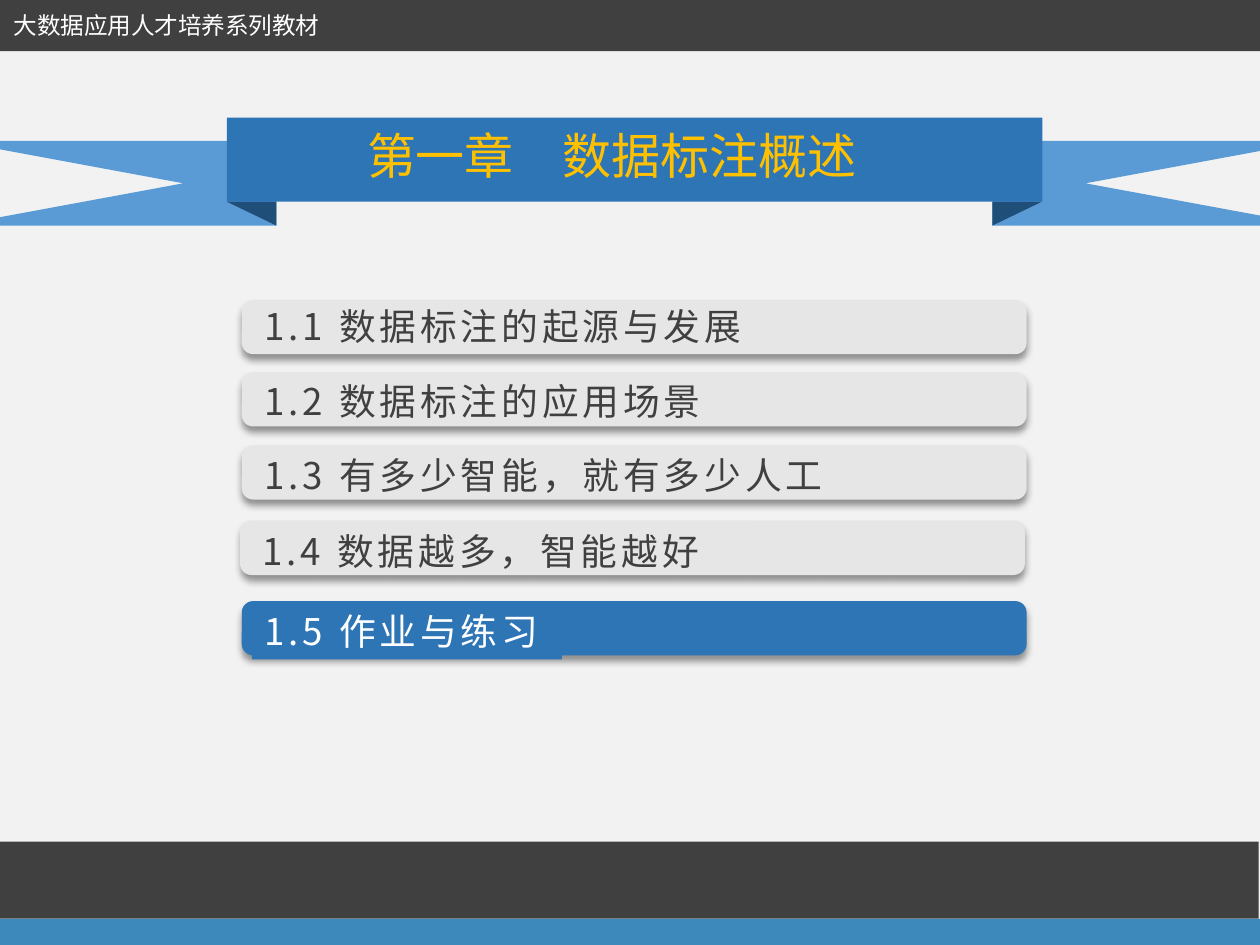
import pptx
import pptx.util
import pptx.dml.color
import pptx.enum.shapes
import pptx.enum.text
import pptx.oxml
import pptx.oxml.ns

Pt = pptx.util.Pt
SHAPES = pptx.enum.shapes.MSO_SHAPE
ALIGN = pptx.enum.text.PP_ALIGN
SHADOW = (
    f'<a:effectLst {pptx.oxml.ns.nsdecls("a")}>'
    f'<a:outerShdw blurRad="{Pt(4)}" dist="{Pt(3)}" dir="5400000" algn="t" rotWithShape="0">'
    '<a:srgbClr val="000000"><a:alpha val="40000"/></a:srgbClr>'
    '</a:outerShdw></a:effectLst>'
)


def color(value):
    return pptx.dml.color.RGBColor.from_string(value)


class Painter:
    font = "Noto Sans CJK SC"
    blue = "2E75B6"
    light_blue = "5B9BD5"
    navy = "1F4E79"
    dark = "404040"
    white = "FFFFFF"
    gold = "FFC000"

    def __init__(self, slide):
        self.slide = slide

    def paint(self, shape, fill):
        shape.shadow.inherit = False
        shape.fill.solid()
        shape.fill.fore_color.rgb = color(fill)
        shape.line.fill.background()

    def shape(self, kind, left, top, width, height, fill, rotation=0):
        shape = self.slide.shapes.add_shape(kind, Pt(left), Pt(top), Pt(width), Pt(height))
        self.paint(shape, fill)
        shape.rotation = rotation
        return shape

    def polygon(self, points, fill):
        start, *others = [(Pt(x), Pt(y)) for x, y in points]
        builder = self.slide.shapes.build_freeform(*start)
        builder.add_line_segments(others, close=True)
        self.paint(builder.convert_to_shape(), fill)

    def text(self, words, left, top, width, height, size, ink, align=ALIGN.LEFT, spacing=0, fill=None):
        box = self.slide.shapes.add_textbox(Pt(left), Pt(top), Pt(width), Pt(height))
        if fill:
            self.paint(box, fill)
        frame = box.text_frame
        frame.text = words
        frame.word_wrap = False
        frame.auto_size = pptx.enum.text.MSO_AUTO_SIZE.SHAPE_TO_FIT_TEXT
        paragraph = frame.paragraphs[0]
        paragraph.alignment = align
        font = paragraph.runs[0].font
        font.size = Pt(size)
        font.name = self.font
        font.color.rgb = color(ink)
        properties = paragraph.runs[0]._r.get_or_add_rPr()
        east_asian = pptx.oxml.parse_xml(
            f'<a:ea {pptx.oxml.ns.nsdecls("a")} typeface="{self.font}"/>')
        properties.find(pptx.oxml.ns.qn("a:latin")).addnext(east_asian)
        if spacing:
            properties.set("spc", str(round(spacing * 100)))

    def entry(self, words, left, top, text_top, text_width, fill, ink, text_fill=None):
        bar = self.shape(SHAPES.ROUNDED_RECTANGLE, left, top, 448.5, 31, fill)
        bar.adjustments[0] = 0.21
        effects = bar._element.spPr.find(pptx.oxml.ns.qn("a:effectLst"))
        effects.getparent().replace(effects, pptx.oxml.parse_xml(SHADOW))
        self.text(words, left + 5.8, text_top, text_width, 32.4, 21, ink, spacing=2.2, fill=text_fill)

    def ribbon(self):
        center = 362.5
        for side in (-1, 1):
            outer, inner, notch = (center + side * x for x in (388.3, 204.6, 257.8))
            self.polygon([(outer, 80.6), (inner, 80.6), (inner, 128.9), (outer, 128.9), (notch, 104.8)],
                         self.light_blue)
        self.shape(SHAPES.RIGHT_TRIANGLE, 129.7, 115.3, 28.2, 13.6, self.navy, 180)
        self.shape(SHAPES.RIGHT_TRIANGLE, 574.4, 108, 13.6, 28.2, self.navy, 90)
        self.shape(SHAPES.RECTANGLE, 129.7, 67.2, 466, 48.1, self.blue)
        self.text("第一章　数据标注概述", 200.9, 68.4, 297.4, 41, 28, self.gold, ALIGN.CENTER)


def main():
    presentation = pptx.Presentation()
    presentation.slide_width, presentation.slide_height = Pt(720), Pt(540)
    slide = presentation.slides.add_slide(presentation.slide_layouts[6])
    slide.background.fill.solid()
    slide.background.fill.fore_color.rgb = color("F2F2F2")
    painter = Painter(slide)
    painter.ribbon()

    entries = [
        ("1.1 数据标注的起源与发展", 138.2, 171.4, 169.9, 294.5, "E7E6E6"),
        ("1.2 数据标注的应用场景", 138.2, 212.7, 213.1, 271.4, "E6E6E6"),
        ("1.3 有多少智能，就有多少人工", 138.2, 254.5, 255.3, 342, "E6E6E6"),
        ("1.4 数据越多，智能越好", 137.2, 297.6, 298.8, 271.4, "E6E6E6"),
    ]
    for entry in entries:
        painter.entry(*entry, painter.dark)
    painter.entry("1.5 作业与练习", 138.2, 343.5, 344.4, 177.1, painter.blue, painter.white, painter.blue)

    painter.shape(SHAPES.RECTANGLE, -0.7, -0.7, 721.4, 30, painter.dark)
    painter.shape(SHAPES.RECTANGLE, -0.7, 481, 720, 44, painter.dark)
    painter.shape(SHAPES.RECTANGLE, 0, 525, 720, 15, "3D89BC")
    painter.text("大数据应用人才培养系列教材", 0.7, 2.9, 191.5, 23.8, 13.5, painter.white)
    presentation.save("out.pptx")


if __name__ == "__main__":
    main()
